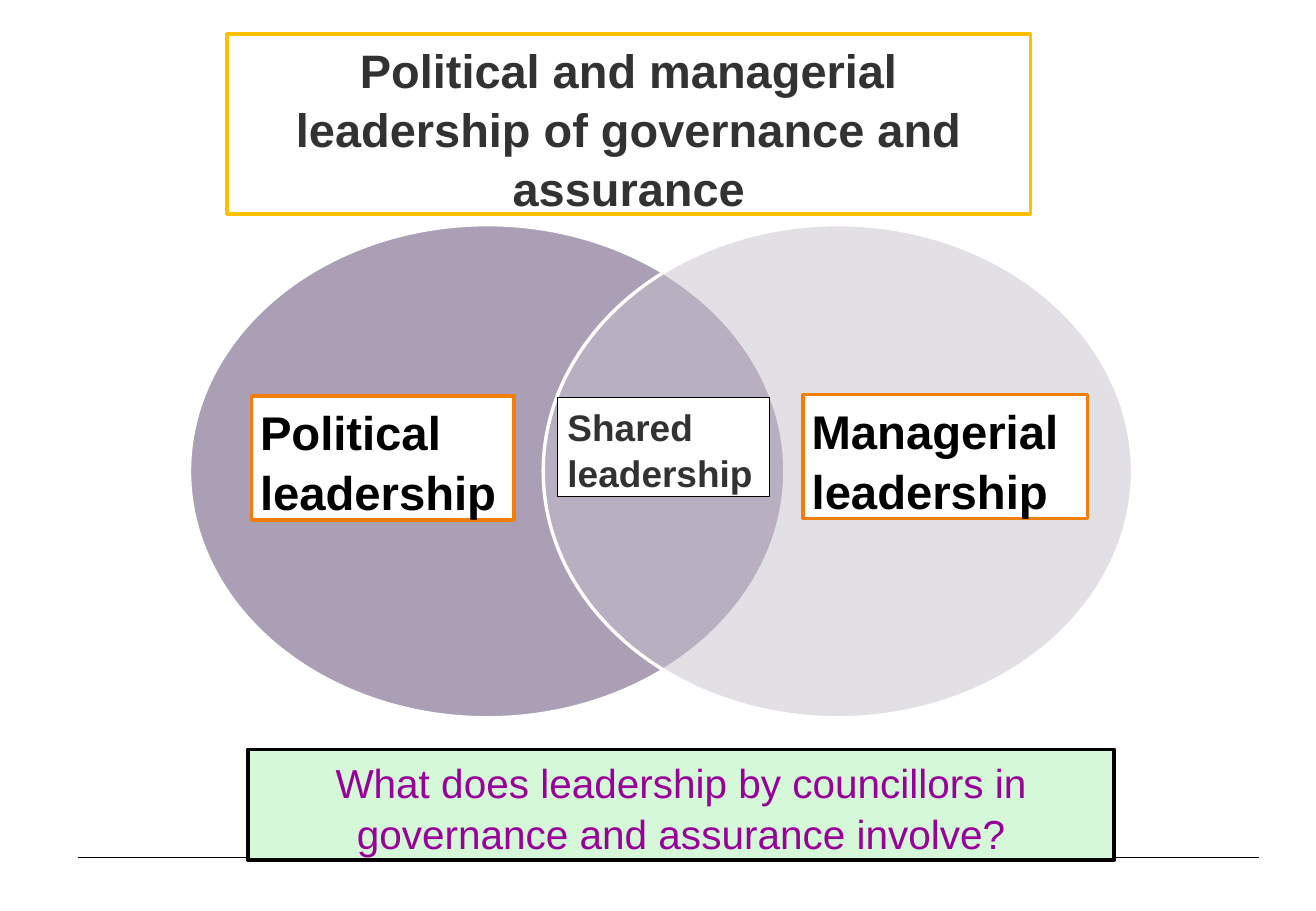
from lxml import etree
from pptx import Presentation
from pptx.dml.color import RGBColor
from pptx.enum.shapes import MSO_CONNECTOR, MSO_SHAPE
from pptx.enum.text import MSO_ANCHOR, MSO_AUTO_SIZE, PP_ALIGN
from pptx.oxml.ns import qn
from pptx.util import Inches, Pt

STRAIGHT = MSO_CONNECTOR.STRAIGHT
OVAL, RECTANGLE = MSO_SHAPE.OVAL, MSO_SHAPE.RECTANGLE
TOP, GROW = MSO_ANCHOR.TOP, MSO_AUTO_SIZE.SHAPE_TO_FIT_TEXT
LEFT, CENTER = PP_ALIGN.LEFT, PP_ALIGN.CENTER

COLORS = {
    "white": "FFFFFF", "black": "000000", "dark": "323232",
    "political": "57416D", "managerial": "C6C2CB", "orange": "F07F09",
    "gold": "FFC000", "mint": "D4F8D8", "purple": "990099",
}
FONT = "Arial"
LINE_SPACING = 1.05

# Content: position and size in inches, text sizes and lines in points
TITLE = {
    "lines": ["Political and managerial leadership of governance and assurance"],
    "box": (1.87, 0.28, 6.61, 1.48), "fill": None, "line": ("gold", 2.25),
    "size": 27.8, "color": "dark", "bold": True, "align": CENTER, "insets": (0.08, 0.04),
}
CIRCLES = [("political", 1.56, 4.9), ("managerial", 4.47, 4.85)]
CIRCLE_TOP, CIRCLE_HEIGHT = 1.85, 4.06
SIDE_LABEL = {
    "fill": "white", "line": ("orange", 2), "size": 28, "color": "black",
    "bold": True, "align": LEFT, "insets": (0.07, 0.04),
}
LABELS = [
    {**SIDE_LABEL, "lines": ["Political", "leadership"], "box": (2.07, 3.26, 2.16, 1.02)},
    {**SIDE_LABEL, "lines": ["Managerial", "leadership"], "box": (6.61, 3.25, 2.34, 1.02)},
    {"lines": ["Shared", "leadership"], "box": (4.59, 3.27, 1.74, 0.82),
     "fill": "white", "line": ("black", 0.75), "size": 21.9, "color": "dark",
     "bold": True, "align": LEFT, "insets": (0.08, 0.04)},
    {"lines": ["What does leadership by councillors in governance and assurance involve?"],
     "box": (2.04, 6.17, 7.13, 0.91), "fill": "mint", "line": ("black", 2.25),
     "size": 24, "color": "purple", "bold": False, "align": CENTER, "insets": (0.1, 0.05)},
]


def rgb(name):
    return RGBColor.from_string(COLORS[name])


def set_line(shape, color, width):
    shape.line.color.rgb = rgb(color)
    shape.line.width = Pt(width)


def fill_label(shape, label):
    shape.left, shape.top, shape.width, shape.height = map(Inches, label["box"])
    if label["fill"]:
        shape.fill.solid()
        shape.fill.fore_color.rgb = rgb(label["fill"])
    else:
        shape.fill.background()
    set_line(shape, *label["line"])

    frame = shape.text_frame
    frame.word_wrap, frame.auto_size, frame.vertical_anchor = True, GROW, TOP
    side, edge = map(Inches, label["insets"])
    frame.margin_left = frame.margin_right = side
    frame.margin_top = frame.margin_bottom = edge
    for index, line in enumerate(label["lines"]):
        paragraph = frame.add_paragraph() if index else frame.paragraphs[0]
        paragraph.alignment = label["align"]
        paragraph.line_spacing = LINE_SPACING
        paragraph.space_before = Pt(0)
        run = paragraph.add_run()
        run.text = line
        run.font.name, run.font.size = FONT, Pt(label["size"])
        run.font.bold = label["bold"]
        run.font.color.rgb = rgb(label["color"])


presentation = Presentation()
presentation.slide_width, presentation.slide_height = Inches(10.83), Inches(7.5)
slide = presentation.slides.add_slide(presentation.slide_layouts[5])
shapes = slide.shapes

# Title
fill_label(shapes.title, TITLE)

# Footer rule
rule = shapes.add_connector(STRAIGHT, Inches(0.64), Inches(7.06), Inches(10.36), Inches(7.06))
set_line(rule, "black", 0.75)
etree.SubElement(rule._element.spPr, qn("a:effectLst"))

# Overlapping half-transparent circles
for color, left, width in CIRCLES:
    circle = shapes.add_shape(OVAL, Inches(left), Inches(CIRCLE_TOP),
                              Inches(width), Inches(CIRCLE_HEIGHT))
    circle.shadow.inherit = False
    circle.fill.solid()
    circle.fill.fore_color.rgb = rgb(color)
    fill_color = circle._element.spPr.find(qn("a:solidFill")).find(qn("a:srgbClr"))
    etree.SubElement(fill_color, qn("a:alpha"), val="50000")
    set_line(circle, "white", 2)

# Labels and closing question
for label in LABELS:
    box = shapes.add_shape(RECTANGLE, *map(Inches, label["box"]))
    box.shadow.inherit = False
    fill_label(box, label)

presentation.save("out.pptx")
